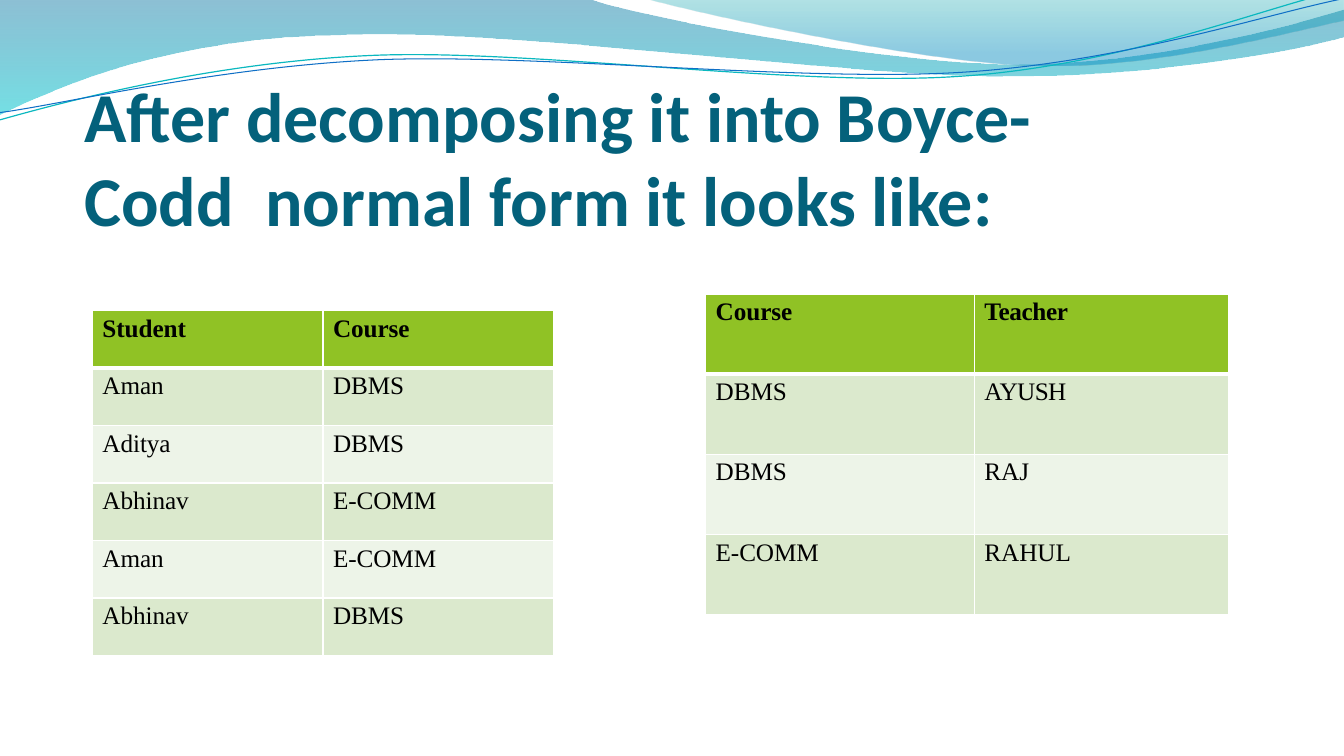
from math import cos, radians, sin

from lxml.etree import SubElement
from pptx import Presentation
from pptx.dml.color import RGBColor
from pptx.enum.text import MSO_ANCHOR, MSO_AUTO_SIZE, PP_ALIGN
from pptx.oxml.ns import qn
from pptx.util import Emu, Inches, Pt

COLS, ROWS = 160, 90
UNIT = Pt(6)
TILT = 2.7

BAND = [(0, 0), (70.4, -0.1),
        (76.1, 2, 106.2, 7.6, 121.3, 7.6), (136.6, 7.6, 153.4, 3.1, 160, 1.1),
        (160.2, 4.3),
        (157.3, 5.3, 139.2, 9.1, 119.3, 9), (99.5, 9, 61.1, 3.4, 41.2, 4.1),
        (20.6, 4.3, 7.3, 10, -0.1, 13.6), (0, 0)]
SHEEN = [(76.7, -0.1),
         (81.5, 1.3, 109.1, 7.4, 123, 7.8), (136.9, 8.3, 153.8, 3.8, 160, 2.5),
         (160, 0), (76.7, -0.1)]
TEAL = [(-0.1, 14.3), (7.7, 12.1, 25.3, 7.4, 44.3, 6.6),
        (63.2, 5.8, 94.8, 10.4, 114, 9.1), (133.2, 7.9, 150.2, 1, 159.7, -1.2)]
BLUE = [(0, 13.4), (7.6, 12.4, 26.2, 7.9, 45.4, 7.1),
        (64.4, 6.4, 95.5, 9.8, 114.6, 8.6), (133.8, 7.4, 150.6, 1.7, 160.1, -0.2)]

STUDENTS = [("Student", "Course"), ("Aman", "DBMS"), ("Aditya", "DBMS"),
            ("Abhinav", "E-COMM"), ("Aman", "E-COMM"), ("Abhinav", "DBMS")]
TEACHERS = [("Course", "Teacher"), ("DBMS", "AYUSH"), ("DBMS", "RAJ"),
            ("E-COMM", "RAHUL")]
TIGHT = {"Teacher": -0.25, "AYUSH": -0.45}


def grid(num):
    """Turn grid units into a length."""
    return Emu(round(num * UNIT))


def tint(color, code):
    """Set a colour from a hex string."""
    color.rgb = RGBColor.from_string(code)


def pairs(part):
    """Split a flat row of numbers into points."""
    return list(zip(part[::2], part[1::2]))


def level(parts, mid):
    """Turn the points about a middle to undo the tilt."""
    c, s = cos(radians(TILT)), sin(radians(TILT))
    x0, y0 = mid
    return [[num for x, y in pairs(part)
             for num in (x0 + (x - x0) * c - (y - y0) * s,
                         y0 + (x - x0) * s + (y - y0) * c)]
            for part in parts]


def outline(slide, parts, close):
    """Draw a freeform of straight and Bezier parts without a shadow."""
    first, *rest = [tuple(map(grid, part[-2:])) for part in parts]
    pen = slide.shapes.build_freeform(*first)
    pen.add_line_segments(rest, close=close)
    shape = pen.convert_to_shape()
    shape.shadow.inherit = False
    for node, part in zip(list(shape._element.iter(qn("a:lnTo"))), parts[1:]):
        if len(part) == 6:
            bend = SubElement(node.getparent(), qn("a:cubicBezTo"))
            for x, y in pairs(part):
                SubElement(bend, qn("a:pt"), x=str(grid(x) - shape.left),
                           y=str(grid(y) - shape.top))
            node.getparent().replace(node, bend)
    return shape


def add_wave(slide, parts, stops):
    """Draw a wave with a see-through gradient from top to bottom."""
    wave = outline(slide, parts, True)
    wave.line.fill.background()
    wave.fill.gradient()
    wave.fill.gradient_angle = 270
    for stop, (place, code, _) in zip(wave.fill.gradient_stops, stops):
        stop.position = place
        tint(stop.color, code)
    nodes = wave._element.spPr.iter(qn("a:srgbClr"))
    for node, (_, _, alpha) in zip(nodes, stops):
        SubElement(node, qn("a:alpha"), val=str(alpha * 1000))


def add_curve(slide, parts, mid, code, width):
    """Draw an open, tilted curve."""
    curve = outline(slide, level(parts, mid), False)
    curve.rotation = 360 - TILT
    curve.fill.background()
    tint(curve.line.color, code)
    curve.line.width = Pt(width)


def add_run(para, text, face, size, code, bold, gap):
    """Add one run with its font and letter spacing."""
    run = para.add_run()
    run.text = text
    font = run.font
    font.name, font.size, font.bold = face, Pt(size), bold
    tint(font.color, code)
    font._element.set("spc", str(round(gap * 100)))


def add_title(slide):
    """Fill the title and bring it in front of the waves."""
    title = slide.shapes.title
    title.left, title.top = grid(9.9), grid(8.2)
    title.width, title.height = grid(129.1), grid(20.4)
    frame = title.text_frame
    frame.word_wrap = True
    frame.auto_size = MSO_AUTO_SIZE.SHAPE_TO_FIT_TEXT
    frame.vertical_anchor = MSO_ANCHOR.BOTTOM
    frame.margin_left = frame.margin_right = frame.margin_bottom = 0
    frame.margin_top = Inches(0.01)
    para = frame.paragraphs[0]
    para.alignment = PP_ALIGN.LEFT
    para.space_before = Pt(1)
    para._p.get_or_add_pPr().set("marL", str(Inches(0.01)))
    for text, gap in (("After ", 0),
                      ("decomposing it into Boyce-Codd  normal form it ", -0.05),
                      ("looks like:", 0)):
        add_run(para, text, "Calibri", 50, "04617B", True, gap)
    slide.shapes._spTree.append(title._element)


def add_edges(cell, row):
    """Give a cell white borders, thick below the head row."""
    props = cell._tc.get_or_add_tcPr()
    thick = {"T": row == 1, "B": row == 0}
    for side in "LRTB":
        width = Pt(3 if thick.get(side) else 1)
        edge = SubElement(props, qn("a:ln" + side), w=str(width))
        fill = SubElement(edge, qn("a:solidFill"))
        SubElement(fill, qn("a:srgbClr"), val="FFFFFF")


def fill_cell(cell, text, row):
    """Format and fill one cell."""
    add_edges(cell, row)
    cell.fill.solid()
    shade = "90C225" if row == 0 else ("EDF4E8", "DBE9CD")[row % 2]
    tint(cell.fill.fore_color, shade)
    cell.margin_left = cell.margin_right = cell.margin_bottom = 0
    cell.margin_top = Inches(0.04)
    para = cell.text_frame.paragraphs[0]
    para.space_before = Pt(3.1)
    para._p.get_or_add_pPr().set("marL", str(Inches(0.1)))
    add_run(para, text, "Times New Roman", 18, "000000", row == 0,
            TIGHT.get(text, -0.05))


def add_grid(slide, data, left, top, widths, height):
    """Add a table with equal rows."""
    frame = slide.shapes.add_table(len(data), len(widths), grid(left), grid(top),
                                   grid(sum(widths)), grid(height * len(data)))
    table = frame.table
    for col, width in zip(table.columns, widths):
        col.width = grid(width)
    for row, texts in enumerate(data):
        table.rows[row].height = grid(height)
        for col, text in enumerate(texts):
            fill_cell(table.cell(row, col), text, row)


def main():
    """Build the slide and save it."""
    deck = Presentation()
    deck.slide_width, deck.slide_height = grid(COLS), grid(ROWS)
    slide = deck.slides.add_slide(deck.slide_layouts[5])
    add_wave(slide, BAND, [(0, "0074A1", 45), (1, "00C6CF", 55)])
    add_wave(slide, SHEEN, [(0, "00A1A9", 30), (0.8, "008BBF", 45)])
    add_curve(slide, TEAL, (79.8, 6.9), "0AB8BF", 0.85)
    add_curve(slide, BLUE, (80, 7.1), "0F6FC6", 0.75)
    add_title(slide)
    add_grid(slide, STUDENTS, 11, 37, (27.45, 27.45), 6.84)
    add_grid(slide, TEACHERS, 84, 35, (32, 30.3), 9.55)
    deck.save("out.pptx")


if __name__ == "__main__":
    main()
